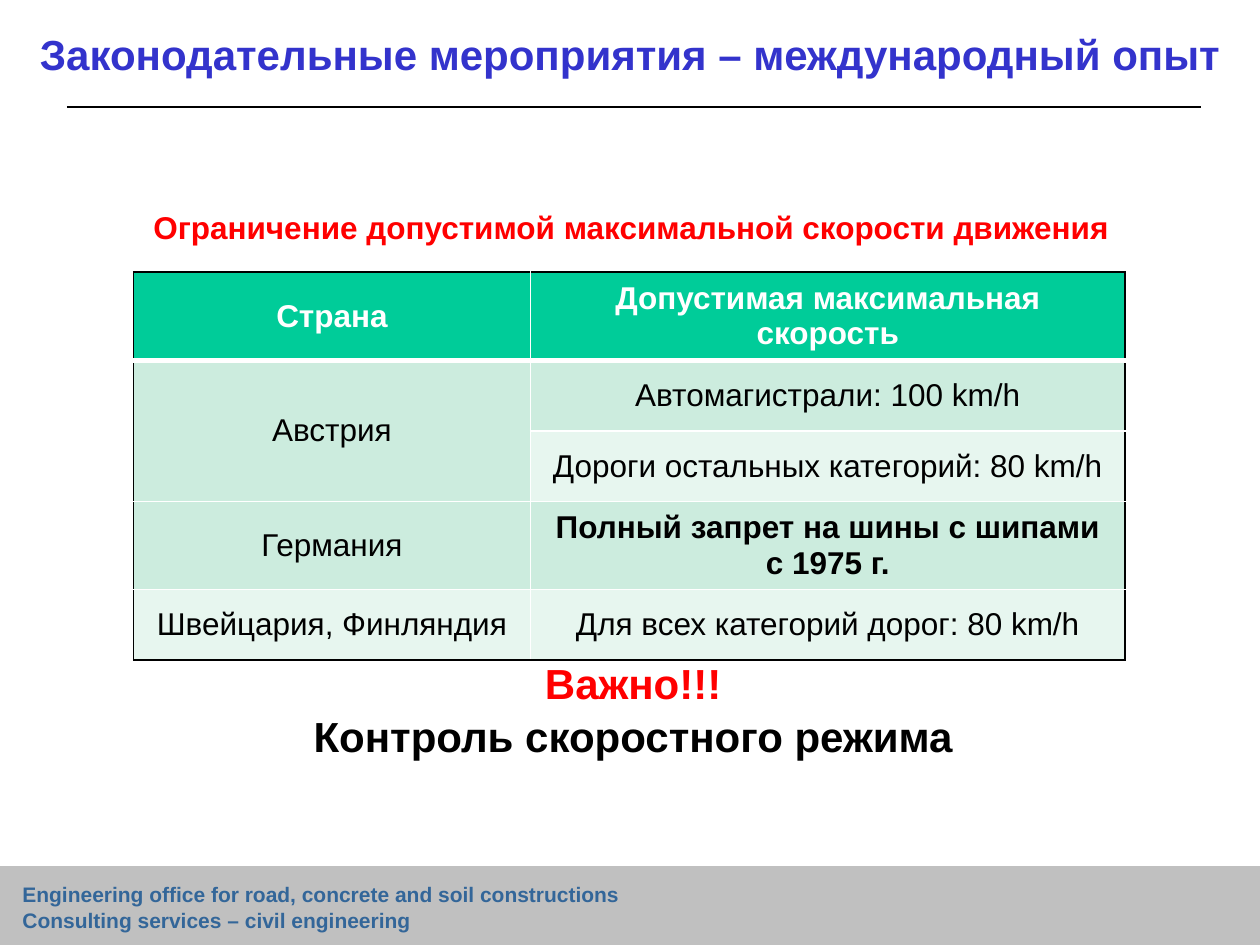
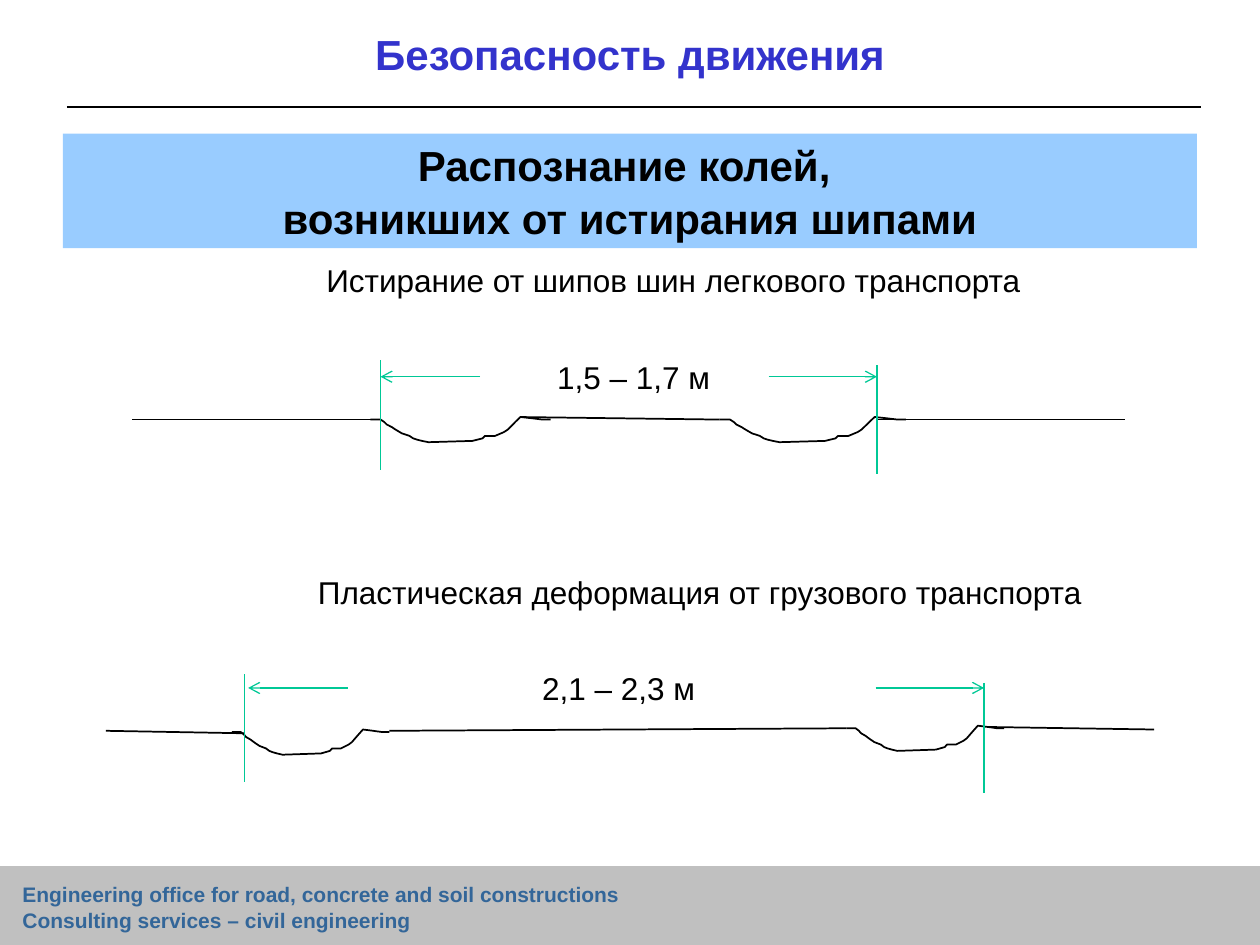
from lxml.etree import SubElement
from pptx import Presentation
from pptx.dml.color import RGBColor
from pptx.enum.shapes import MSO_CONNECTOR, MSO_SHAPE
from pptx.enum.text import MSO_ANCHOR, MSO_AUTO_SIZE, PP_ALIGN
from pptx.oxml.ns import qn
from pptx.util import Inches, Pt

FONT = "Arial"
BLACK, WHITE, RED = "000000", "FFFFFF", "FF0000"
TITLE_BLUE, BANNER_BLUE, FOOTER_BLUE = "3333CC", "99CCFF", "336699"
FOOTER_GRAY, DIMENSION_GREEN = "C0C0C0", "00C896"
HEADER_GREEN, DARK_BAND, LIGHT_BAND = "00CC99", "CCECDE", "E7F6EF"


def write_text(frame, text, size=18, color=BLACK, bold=False, align=PP_ALIGN.CENTER,
               anchor=MSO_ANCHOR.TOP, gap=0):
    frame.word_wrap = True
    frame.auto_size = MSO_AUTO_SIZE.NONE
    frame.vertical_anchor = anchor
    for index, line in enumerate(text.split("\n")):
        paragraph = frame.add_paragraph() if index else frame.paragraphs[0]
        paragraph.alignment = align
        paragraph.space_before = Pt(gap if index else 0)
        run = paragraph.add_run()
        run.text = line
        run.font.name = FONT
        run.font.size = Pt(size)
        run.font.bold = bold
        run.font.color.rgb = RGBColor.from_string(color)


def draw_line(slide, start, end, color=BLACK, width=1, arrow=False):
    connector = slide.shapes.add_connector(
        MSO_CONNECTOR.STRAIGHT, *[Inches(value) for value in (*start, *end)])
    connector.line.color.rgb = RGBColor.from_string(color)
    connector.line.width = Pt(width)
    properties = connector._element.spPr
    if arrow:
        SubElement(properties.find(qn("a:ln")), qn("a:tailEnd"), type="arrow")
    SubElement(properties, qn("a:effectLst"))


presentation = Presentation()
presentation.slide_width = Inches(10)
presentation.slide_height = Inches(7.5)

slides = []
for title_text in ("Законодательные мероприятия – международный опыт", "Безопасность движения"):
    slide = presentation.slides.add_slide(presentation.slide_layouts[5])
    title = slide.shapes.title
    title.left, title.top, title.width, title.height = [
        Inches(value) for value in (0, 0, 10, 0.85)]
    write_text(title.text_frame, title_text, size=24, color=TITLE_BLUE, bold=True,
               anchor=MSO_ANCHOR.MIDDLE)
    draw_line(slide, (0.53, 0.85), (9.53, 0.85), width=1.5)
    footer_band = slide.shapes.add_shape(
        MSO_SHAPE.RECTANGLE, 0, Inches(6.88), Inches(10), Inches(0.62))
    footer_band.shadow.inherit = False
    footer_band.fill.solid()
    footer_band.fill.fore_color.rgb = RGBColor.from_string(FOOTER_GRAY)
    footer_band.line.color.rgb = RGBColor.from_string(FOOTER_GRAY)
    footer_band.line.width = Pt(0.75)
    footer = slide.shapes.add_textbox(Inches(0.08), Inches(6.95), Inches(6.34), Inches(0.51))
    write_text(footer.text_frame,
               "Engineering office for road, concrete and soil constructions\n"
               "Consulting services – civil engineering",
               size=12, color=FOOTER_BLUE, bold=True, align=PP_ALIGN.LEFT)
    slides.append(slide)

speed_slide, rut_slide = slides

conclusion = speed_slide.shapes.add_textbox(Inches(1.09), Inches(5.17), Inches(7.87), Inches(0.91))
write_text(conclusion.text_frame, "Важно!!!\nКонтроль скоростного режима", size=24, bold=True,
           anchor=MSO_ANCHOR.MIDDLE, gap=1.5)
conclusion.text_frame.paragraphs[0].runs[0].font.color.rgb = RGBColor.from_string(RED)

caption = speed_slide.shapes.add_textbox(Inches(0.51), Inches(1.6), Inches(9), Inches(0.4))
write_text(caption.text_frame, "Ограничение допустимой максимальной скорости движения",
           color=RED, bold=True)

speed_limits = [
    ("Страна", "Допустимая максимальная скорость"),
    ("Австрия", "Автомагистрали: 100 km/h"),
    ("", "Дороги остальных категорий: 80 km/h"),
    ("Германия", "Полный запрет на шины с шипами с 1975 г."),
    ("Швейцария, Финляндия", "Для всех категорий дорог: 80 km/h"),
]
row_heights = [0.7, 0.56, 0.56, 0.7, 0.56]
row_fills = [HEADER_GREEN, DARK_BAND, LIGHT_BAND, DARK_BAND, LIGHT_BAND]
last_row = len(speed_limits) - 1
table = speed_slide.shapes.add_table(
    len(speed_limits), 2, Inches(1.06), Inches(2.16), Inches(7.87), Inches(sum(row_heights))).table
table.columns[0].width = Inches(3.15)
table.columns[1].width = Inches(4.72)
table.cell(1, 0).merge(table.cell(2, 0))

for row, texts in enumerate(speed_limits):
    table.rows[row].height = Inches(row_heights[row])
    for column, text in enumerate(texts):
        cell = table.cell(row, column)
        borders = {
            "a:lnL": (WHITE if column else BLACK, 1),
            "a:lnR": (BLACK if column else WHITE, 1),
            "a:lnT": (WHITE if row else BLACK, 3 if row == 1 else 1),
            "a:lnB": (BLACK if row == last_row else WHITE, 1 if row else 3),
        }
        for tag, (color, width) in borders.items():
            border = SubElement(cell._tc.get_or_add_tcPr(), qn(tag), w=str(Pt(width)))
            SubElement(SubElement(border, qn("a:solidFill")), qn("a:srgbClr"), val=color)
        cell.fill.solid()
        cell.fill.fore_color.rgb = RGBColor.from_string(row_fills[row])
        if text:
            write_text(cell.text_frame, text, color=BLACK if row else WHITE,
                       bold=row == 0 or (row == 3 and column == 1))
            cell.vertical_anchor = MSO_ANCHOR.MIDDLE

banner = rut_slide.shapes.add_shape(
    MSO_SHAPE.RECTANGLE, Inches(0.5), Inches(1.06), Inches(9), Inches(0.91))
banner.shadow.inherit = False
banner.fill.solid()
banner.fill.fore_color.rgb = RGBColor.from_string(BANNER_BLUE)
banner.line.fill.background()
write_text(banner.text_frame, "Распознание колей, \nвозникших от истирания шипами", size=24,
           bold=True, anchor=MSO_ANCHOR.MIDDLE, gap=1.5)

labels = [
    ("Истирание от шипов шин легкового транспорта", 2.19, 2.02, 6.31),
    ("1,5 – 1,7 м", 3.93, 2.79, 2.2),
    ("Пластическая деформация от грузового транспорта", 2.19, 4.5, 6.73),
    ("2,1 – 2,3 м", 3.81, 5.26, 2.2),
]
for text, left, top, width in labels:
    label = rut_slide.shapes.add_textbox(Inches(left), Inches(top), Inches(width), Inches(0.4))
    write_text(label.text_frame, text)

road_lines = [
    ((1.05, 3.33), (3.02, 3.33)),
    ((4.13, 3.31), (5.71, 3.33)),
    ((6.96, 3.33), (8.93, 3.33)),
    ((0.84, 5.8), (1.94, 5.82)),
    ((3.09, 5.8), (6.72, 5.78)),
    ((7.84, 5.77), (9.16, 5.79)),
]
for start, end in road_lines:
    draw_line(rut_slide, start, end)

rut_profile = [
    (0, 2), (8, 2), (11, 4), (13, 6), (17, 8), (20, 10), (25, 13), (31, 15), (34, 17),
    (37, 18), (41, 19), (46, 19.5), (81, 19), (89, 17), (91, 15), (99, 15), (106, 12),
    (109, 10), (113, 6), (115, 4), (119, 0), (128, 1), (136, 2), (143, 2),
]
profile_width = rut_profile[-1][0]
ruts = [(2.94, 3.31, 1.43), (5.71, 3.31, 1.48), (1.84, 5.79, 1.25), (6.72, 5.76, 1.25)]
for left, top, width in ruts:
    builder = rut_slide.shapes.build_freeform(
        *rut_profile[0], scale=(Inches(width) / profile_width, Inches(0.01)))
    builder.add_line_segments(rut_profile[1:], close=False)
    rut = builder.convert_to_shape(Inches(left), Inches(top))
    rut.shadow.inherit = False
    rut.fill.background()
    rut.line.color.rgb = RGBColor.from_string(BLACK)
    rut.line.width = Pt(1)

dimension_lines = [
    ((3.02, 2.86), (3.02, 3.73), False),
    ((6.96, 2.9), (6.96, 3.76), False),
    ((3.81, 2.99), (3.02, 2.99), True),
    ((6.1, 2.99), (6.96, 2.99), True),
    ((1.94, 5.35), (1.94, 6.21), False),
    ((7.81, 5.42), (7.81, 6.29), False),
    ((2.76, 5.46), (1.97, 5.46), True),
    ((6.95, 5.46), (7.81, 5.46), True),
]
for start, end, arrow in dimension_lines:
    draw_line(rut_slide, start, end, color=DIMENSION_GREEN, width=0.75, arrow=arrow)

presentation.save("out.pptx")
